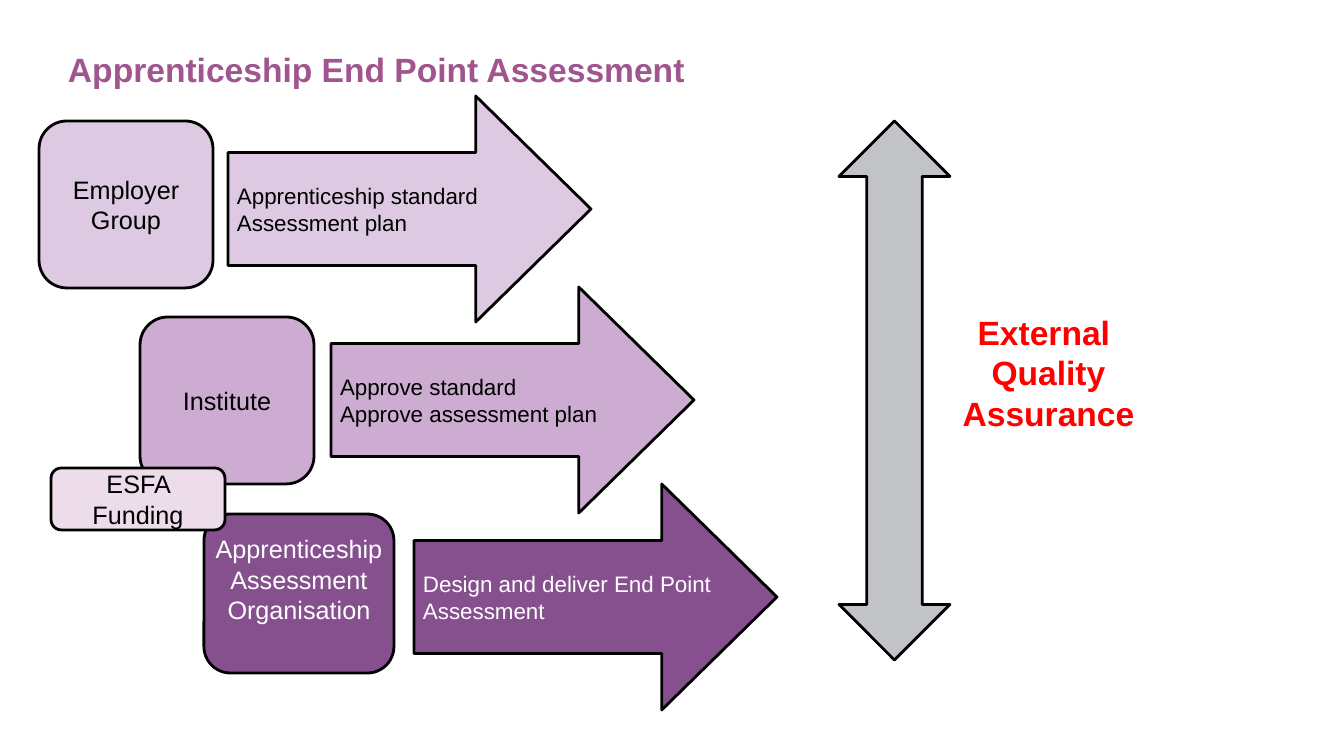
"""Builds the Apprenticeship End Point Assessment slide."""
import pptx
import pptx.dml.color
import pptx.enum.shapes
import pptx.enum.text
import pptx.util

EMU_PER_PX = 914400 / 100.8
SHAPES = pptx.enum.shapes.MSO_SHAPE
ALIGN = pptx.enum.text.PP_ALIGN
ANCHOR = pptx.enum.text.MSO_ANCHOR
BLACK, WHITE = "000000", "FFFFFF"
BOX_INSETS = (10, 5, 10, 5)
ARROW_INSETS = (9, 0, 4, 0)
STAGES = [
    ("Employer\nGroup", (39, 121, 174, 167), BOX_INSETS,
     "Apprenticeship standard\nAssessment plan", (228, 96), "DDC9E1", BLACK),
    ("Institute", (140, 317, 174, 167), BOX_INSETS,
     "Approve standard\nApprove assessment plan", (331, 287), "CCADD1", BLACK),
    ("Apprenticeship Assessment Organisation", (204, 514, 190, 159), (0, 5, 0, 34),
     "Design and deliver End Point\nAssessment", (414, 484), "86508F", WHITE),
]


def px(length):
    return pptx.util.Emu(round(length * EMU_PER_PX))


def rgb(color):
    return pptx.dml.color.RGBColor.from_string(color)


def write_text(shape, text, size=18, color=BLACK, bold=False, align=ALIGN.CENTER,
               anchor=ANCHOR.MIDDLE, insets=BOX_INSETS, wrap=True):
    frame = shape.text_frame
    frame.word_wrap = wrap
    frame.vertical_anchor = anchor
    (frame.margin_left, frame.margin_top,
     frame.margin_right, frame.margin_bottom) = map(px, insets)
    frame.text = text
    for para in frame.paragraphs:
        para.alignment = align
        for span in para.runs:
            span.font.name = "Arial"
            span.font.size = pptx.util.Pt(size)
            span.font.bold = bold
            span.font.color.rgb = rgb(color)


def add_outlined_shape(page, kind, bounds, fill):
    shape = page.shapes.add_shape(kind, *map(px, bounds))
    shape.shadow.inherit = False
    shape.fill.solid()
    shape.fill.fore_color.rgb = rgb(fill)
    shape.line.color.rgb = rgb(BLACK)
    shape.line.width = pptx.util.Pt(2)
    return shape


def add_box(page, text, bounds, fill, color=BLACK, insets=BOX_INSETS):
    box = add_outlined_shape(page, SHAPES.ROUNDED_RECTANGLE, bounds, fill)
    write_text(box, text, color=color, insets=insets)


def add_task_arrow(page, text, corner, fill, color):
    arrow = add_outlined_shape(page, SHAPES.RIGHT_ARROW, (*corner, 363, 226), fill)
    arrow.adjustments[1] = 0.51
    write_text(arrow, text, size=16, color=color, align=ALIGN.LEFT, insets=ARROW_INSETS)


def add_title(page, text):
    title = page.shapes.title
    title.left, title.top, title.width, title.height = map(px, (68, 45, 933, 64))
    write_text(title, text, size=24, color="A0558F", bold=True, align=ALIGN.LEFT,
               anchor=ANCHOR.TOP, insets=(0, 4, 0, 4))


def main():
    deck = pptx.Presentation()
    deck.slide_width, deck.slide_height = px(1344), px(756)
    page = deck.slides.add_slide(deck.slide_layouts.get_by_name("Title Only"))
    add_title(page, "Apprenticeship End Point Assessment")
    for body, bounds, insets, task, corner, fill, color in STAGES:
        add_box(page, body, bounds, fill, color, insets)
        add_task_arrow(page, task, corner, fill, color)
    add_outlined_shape(page, SHAPES.UP_DOWN_ARROW, (839, 121, 111, 539), "C1C3C6")
    assurance = page.shapes.add_textbox(*map(px, (951, 307, 195, 132)))
    write_text(assurance, "External \nQuality\nAssurance", size=24, color="FF0000",
               bold=True, anchor=ANCHOR.TOP, wrap=False)
    add_box(page, "ESFA Funding", (51, 468, 174, 62), "EDDCE9")
    deck.save("out.pptx")


if __name__ == "__main__":
    main()
